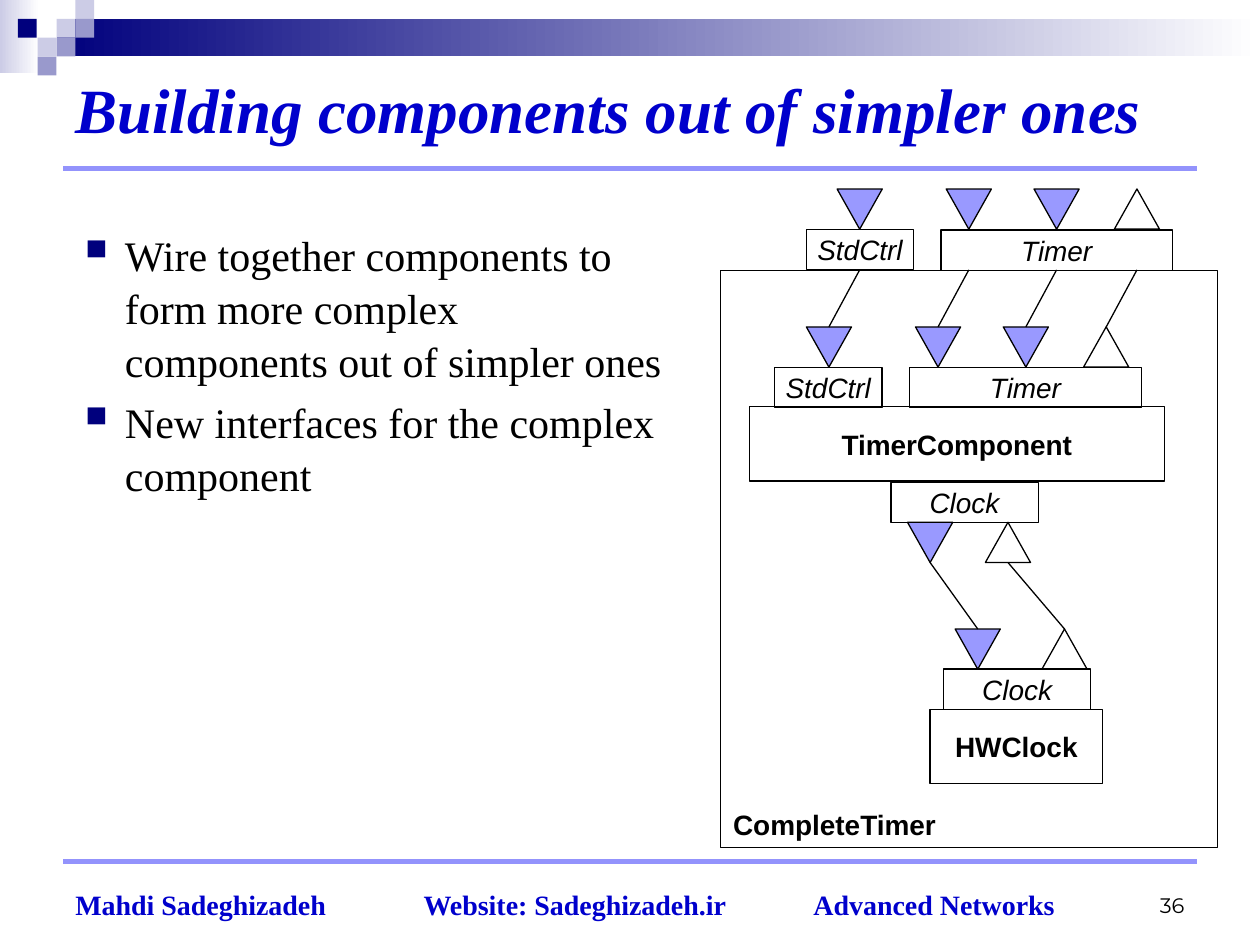
from lxml import etree
from pptx import Presentation
from pptx import util as u
from pptx.dml.color import RGBColor
from pptx.enum import shapes as s, text as t
from pptx.oxml import ns

# Content: lengths in cm
TITLE = "Building components out of simpler ones"
POINTS = [
    "Wire together components to form more complex components out of simpler ones",
    "New interfaces for the complex component",
]
FOOT = ["Mahdi Sadeghizadeh", "Website: Sadeghizadeh.ir", "Advanced Networks"]
TABS = [7.02, 14.88]
PAGE = "36"

NAVY, PALE, MID = "00007D", "CCCCE6", "9999CC"
BLUE, RULE, LILAC, BLACK = "0000CC", "9393FC", "9999FF", "000000"
SERIF, SANS = "Times New Roman", "Arial"

FADES = [(0, 0, 0.79, 1.47, PALE), (1.14, 0.38, 24.26, 0.76, NAVY)]
SIDE = 0.38
TILES = [(1.14, 0.38, PALE), (1.52, 0, PALE), (1.52, 0.38, MID), (0.76, 0.76, PALE),
         (0.36, 0.38, NAVY), (1.14, 0.76, MID), (0.76, 1.14, MID)]

# Components: name, left, top, width, height
PARTS = [
    ("CompleteTimer", 14.53, 5.46, 10.01, 11.63),
    ("TimerComponent", 15.11, 8.2, 8.36, 1.5),
    ("HWClock", 18.75, 14.3, 3.48, 1.5),
]
# Interfaces: name, left, top, width
PORTS = [
    ("StdCtrl", 16.26, 4.63, 2.16), ("Timer", 18.97, 4.64, 4.67),
    ("StdCtrl", 15.62, 7.41, 2.16), ("Timer", 18.34, 7.41, 4.67),
    ("Clock", 17.96, 9.73, 2.97), ("Clock", 19.02, 13.49, 2.97),
]
PORT_H = 0.81
TRI_W, TRI_H = 0.91, 0.81

# Wires: upper and lower triangle centre, filled (command) or open (event)
SHIFT = 0.62
INNER = [(16.71, True), (18.91, True), (20.68, True), (22.3, False)]
CLOCKS = [(18.75, 19.71, True), (20.32, 21.46, False)]
# Each level: upper triangle top, lower triangle top, wire start, wires
LEVELS = [
    (3.81, 6.59, 5.44, [(x + SHIFT, x, full) for x, full in INNER]),
    (10.53, 12.68, 11.34, CLOCKS),
]

deck = Presentation()
deck.slide_width, deck.slide_height = u.Cm(25.4), u.Cm(19.05)
slide = deck.slides.add_slide(deck.slide_layouts[6])


def rgb(code):
    return RGBColor.from_string(code)


def style(par, size, face, code, bold=False, slant=False):
    font = par.font
    font.size, font.name = u.Pt(size), face
    font.bold, font.italic = bold, slant
    font.color.rgb = rgb(code)


def shape(kind, x, y, w, h, fill=None, line=None):
    item = slide.shapes.add_shape(kind, u.Cm(x), u.Cm(y), u.Cm(w), u.Cm(h))
    item.shadow.inherit = False
    if fill:
        item.fill.solid()
        item.fill.fore_color.rgb = rgb(fill)
    else:
        item.fill.background()
    if line:
        item.line.color.rgb = rgb(line)
        item.line.width = u.Pt(0.75)
    else:
        item.line.fill.background()
    return item


def box(name, x, y, w, h, bold):
    item = shape(s.MSO_SHAPE.RECTANGLE, x, y, w, h, line=BLACK)
    frame = item.text_frame
    frame.word_wrap = False
    frame.vertical_anchor = t.MSO_ANCHOR.MIDDLE
    par = frame.paragraphs[0]
    par.text = name
    par.alignment = t.PP_ALIGN.CENTER
    style(par, 16, SANS, BLACK, bold, not bold)
    return item


def line(x1, y1, x2, y2, code=BLACK, width=0.75):
    item = slide.shapes.add_connector(
        s.MSO_CONNECTOR.STRAIGHT, u.Cm(x1), u.Cm(y1), u.Cm(x2), u.Cm(y2))
    item.line.color.rgb = rgb(code)
    item.line.width = u.Pt(width)
    etree.SubElement(item.element.spPr, ns.qn("a:effectLst"))


def label(x, y, w, h, anchor):
    frame = slide.shapes.add_textbox(u.Cm(x), u.Cm(y), u.Cm(w), u.Cm(h)).text_frame
    frame.word_wrap = True
    frame.vertical_anchor = anchor
    return frame


def bullet(par):
    props = par._p.get_or_add_pPr()
    props.set("marL", str(u.Cm(0.97)))
    props.set("indent", str(-u.Cm(0.97)))
    color = etree.SubElement(props, ns.qn("a:buClr"))
    etree.SubElement(color, ns.qn("a:srgbClr"), val=NAVY)
    etree.SubElement(props, ns.qn("a:buSzPct"), val="125000")
    etree.SubElement(props, ns.qn("a:buChar"), char="▪")


# Banner
for x, y, w, h, code in FADES:
    fill = shape(s.MSO_SHAPE.RECTANGLE, x, y, w, h).fill
    fill.gradient()
    fill.gradient_angle = 0
    for stop, tint, pos in zip(fill.gradient_stops, (code, "FFFFFF"), (0, 1)):
        stop.color.rgb = rgb(tint)
        stop.position = pos
for x, y, code in TILES:
    shape(s.MSO_SHAPE.RECTANGLE, x, y, SIDE, SIDE, code)

# Rules
for y in (3.39, 17.36):
    line(1.27, y, 24.13, y, RULE, 3)

# Title
par = label(1.27, 1.02, 22.86, 2.34, t.MSO_ANCHOR.MIDDLE).paragraphs[0]
par.text = TITLE
style(par, 36, SERIF, BLUE, True, True)

# Points
frame = label(1.3, 4.45, 12.45, 6.99, t.MSO_ANCHOR.TOP)
for i, words in enumerate(POINTS):
    par = frame.add_paragraph() if i else frame.paragraphs[0]
    par.text = words
    par.line_spacing = 1.05
    if i:
        par.space_before = u.Pt(4.8)
    bullet(par)
    style(par, 24, SERIF, BLACK)

# Components and interfaces
for name, *place in PARTS:
    item = box(name, *place, True)
    if name == "CompleteTimer":
        item.text_frame.vertical_anchor = t.MSO_ANCHOR.BOTTOM
        item.text_frame.paragraphs[0].alignment = t.PP_ALIGN.LEFT
for name, x, y, w in PORTS:
    box(name, x, y, w, PORT_H, False)

# Triangles and wires
for top, low, start, wires in LEVELS:
    for x1, x2, full in wires:
        for x, y in ((x1, top), (x2, low)):
            tri = shape(s.MSO_SHAPE.ISOSCELES_TRIANGLE, x - TRI_W / 2, y,
                        TRI_W, TRI_H, LILAC if full else None, BLACK)
            tri.rotation = 180 if full else 0
        line(x1, start, x2, low)

# Footer
par = label(1.27, 17.42, 20.96, 1.27, t.MSO_ANCHOR.BOTTOM).paragraphs[0]
par.text = "\t".join(FOOT)
stops = etree.SubElement(par._p.get_or_add_pPr(), ns.qn("a:tabLst"))
for x in TABS:
    etree.SubElement(stops, ns.qn("a:tab"), pos=str(u.Cm(x)), algn="l")
style(par, 16, SERIF, BLUE, True)
par = label(18.21, 17.35, 5.92, 1.27, t.MSO_ANCHOR.BOTTOM).paragraphs[0]
par.text = PAGE
par.alignment = t.PP_ALIGN.RIGHT
style(par, 12, "Montserrat", BLACK)

deck.save("out.pptx")
